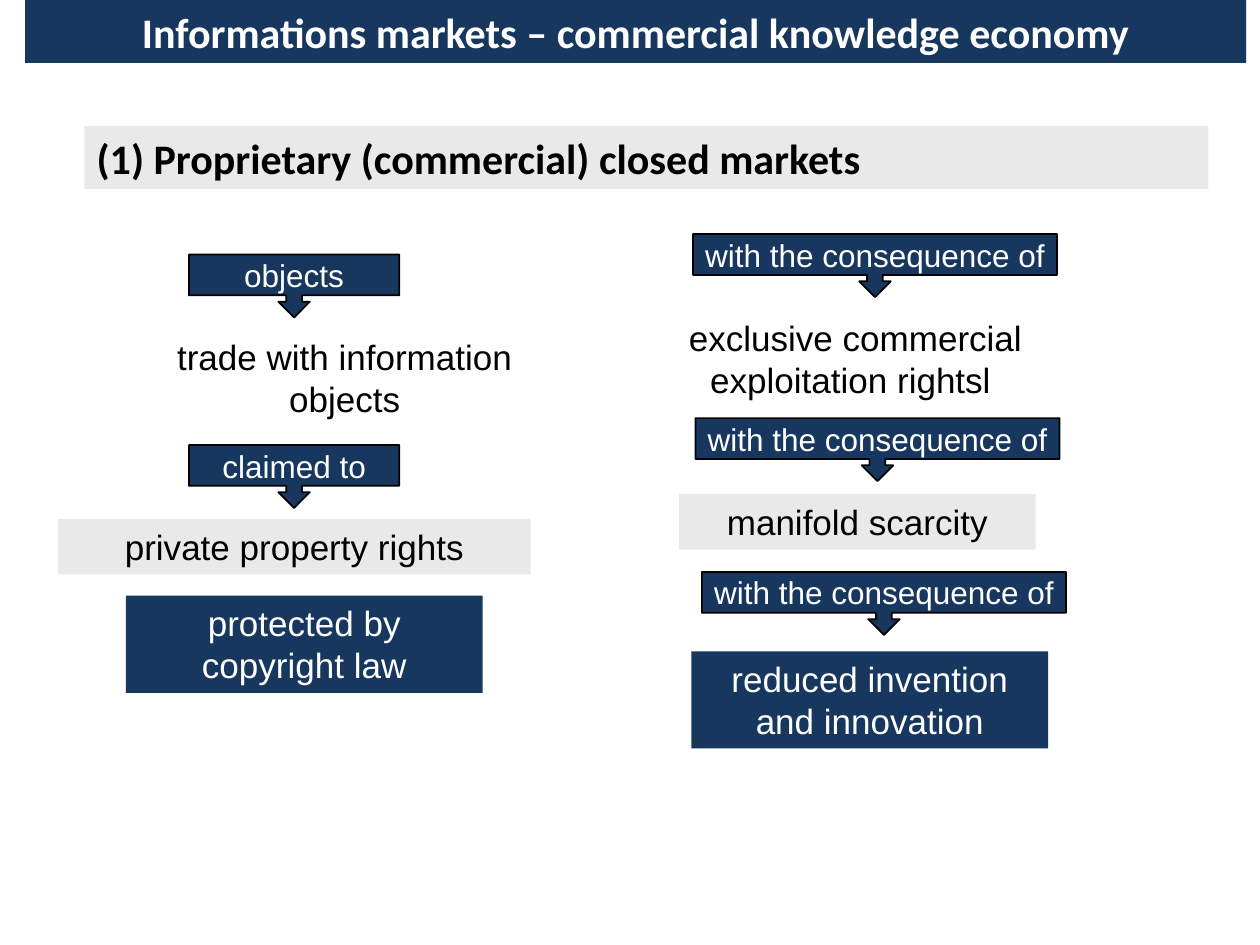
from dataclasses import dataclass

import pptx
import pptx.dml.color
import pptx.enum.shapes
import pptx.enum.text
import pptx.util
from pptx.util import Cm

RGBColor = pptx.dml.color.RGBColor
Align = pptx.enum.text.PP_ALIGN
Anchor = pptx.enum.text.MSO_ANCHOR
Preset = pptx.enum.shapes.MSO_SHAPE

NAVY = RGBColor(0x17, 0x37, 0x5E)
GREY = RGBColor(0xE9, 0xE9, 0xE9)
WHITE = RGBColor(0xFF, 0xFF, 0xFF)
BLACK = RGBColor(0x00, 0x00, 0x00)

HEADING_HEIGHT = 1.27
CALLOUT_HEIGHT = 1.27
ONE_LINE = 1.12
TWO_LINES = 1.96


@dataclass(frozen=True)
class Panel:
    """A filled text panel, measured in centimetres."""
    text: str
    left: float
    top: float
    width: float
    height: float
    fill: RGBColor


@dataclass(frozen=True)
class Callout:
    """A box with a downward arrow, measured in centimetres."""
    text: str
    left: float
    top: float
    width: float


TITLE = Panel("Informations markets – commercial knowledge economy",
              0.51, 0, 24.61, HEADING_HEIGHT, NAVY)
SUBTITLE = Panel("(1) Proprietary (commercial) closed markets",
                 1.7, 2.54, 22.66, HEADING_HEIGHT, GREY)

STATEMENTS = [
    Panel("trade with information objects", 2.24, 6.63, 9.42, TWO_LINES, WHITE),
    Panel("private property rights", 1.17, 10.46, 9.53, ONE_LINE, GREY),
    Panel("protected by copyright law", 2.54, 12.01, 7.19, TWO_LINES, NAVY),
    Panel("exclusive commercial exploitation rightsl ", 12.9, 6.25, 8.69, TWO_LINES, WHITE),
    Panel("manifold scarcity", 13.69, 9.96, 7.19, ONE_LINE, GREY),
    Panel("reduced invention and innovation", 13.94, 13.13, 7.19, TWO_LINES, NAVY),
]

CONSEQUENCE = "with the consequence of"
CALLOUTS = [
    Callout("objects", 3.81, 5.13, 4.24),
    Callout("claimed to", 3.81, 8.97, 4.24),
    Callout(CONSEQUENCE, 13.97, 4.72, 7.34),
    Callout(CONSEQUENCE, 14.02, 8.43, 7.34),
    Callout(CONSEQUENCE, 14.15, 11.53, 7.34),
]


def write_text(box, text: str, *, size: int, color: RGBColor, font: str = "Arial",
               bold: bool = False, align=Align.CENTER, anchor=Anchor.TOP) -> None:
    frame = box.text_frame
    frame.word_wrap = True
    frame.auto_size = pptx.enum.text.MSO_AUTO_SIZE.SHAPE_TO_FIT_TEXT
    frame.vertical_anchor = anchor
    para = frame.paragraphs[0]
    para.alignment = align
    span = para.add_run()
    span.text = text
    span.font.name = font
    span.font.size = pptx.util.Pt(size)
    span.font.bold = bold
    span.font.color.rgb = color


def add_box(page, preset, left: float, top: float, width: float, height: float,
            fill: RGBColor):
    box = page.shapes.add_shape(preset, Cm(left), Cm(top), Cm(width), Cm(height))
    box.shadow.inherit = False
    box.fill.solid()
    box.fill.fore_color.rgb = fill
    box.line.fill.background()
    return box


def draw_panel(page, panel: Panel, *, size: int = 20, **text_format) -> None:
    box = add_box(page, Preset.RECTANGLE, panel.left, panel.top,
                  panel.width, panel.height, panel.fill)
    color = WHITE if panel.fill == NAVY else BLACK
    write_text(box, panel.text, size=size, color=color, **text_format)


def draw_callout(page, callout: Callout) -> None:
    box = add_box(page, Preset.DOWN_ARROW_CALLOUT, callout.left, callout.top,
                  callout.width, CALLOUT_HEIGHT, NAVY)
    for index, value in enumerate((0.25, 0.25, 0.25, 0.65)):
        box.adjustments[index] = value
    box.line.color.rgb = BLACK
    box.line.width = pptx.util.Pt(1)
    frame = box.text_frame
    frame.margin_left = frame.margin_right = Cm(0.05)
    frame.margin_top = frame.margin_bottom = Cm(0.03)
    write_text(box, callout.text, size=18, color=WHITE, anchor=Anchor.MIDDLE)


def main() -> None:
    deck = pptx.Presentation()
    deck.slide_width, deck.slide_height = Cm(25.4), Cm(19.05)
    page = deck.slides.add_slide(deck.slide_layouts[6])
    draw_panel(page, SUBTITLE, size=24, font="Calibri", bold=True, align=Align.LEFT)
    for statement in STATEMENTS:
        draw_panel(page, statement)
    for callout in CALLOUTS:
        draw_callout(page, callout)
    draw_panel(page, TITLE, size=24, font="Calibri", bold=True)
    deck.save("out.pptx")


if __name__ == "__main__":
    main()
